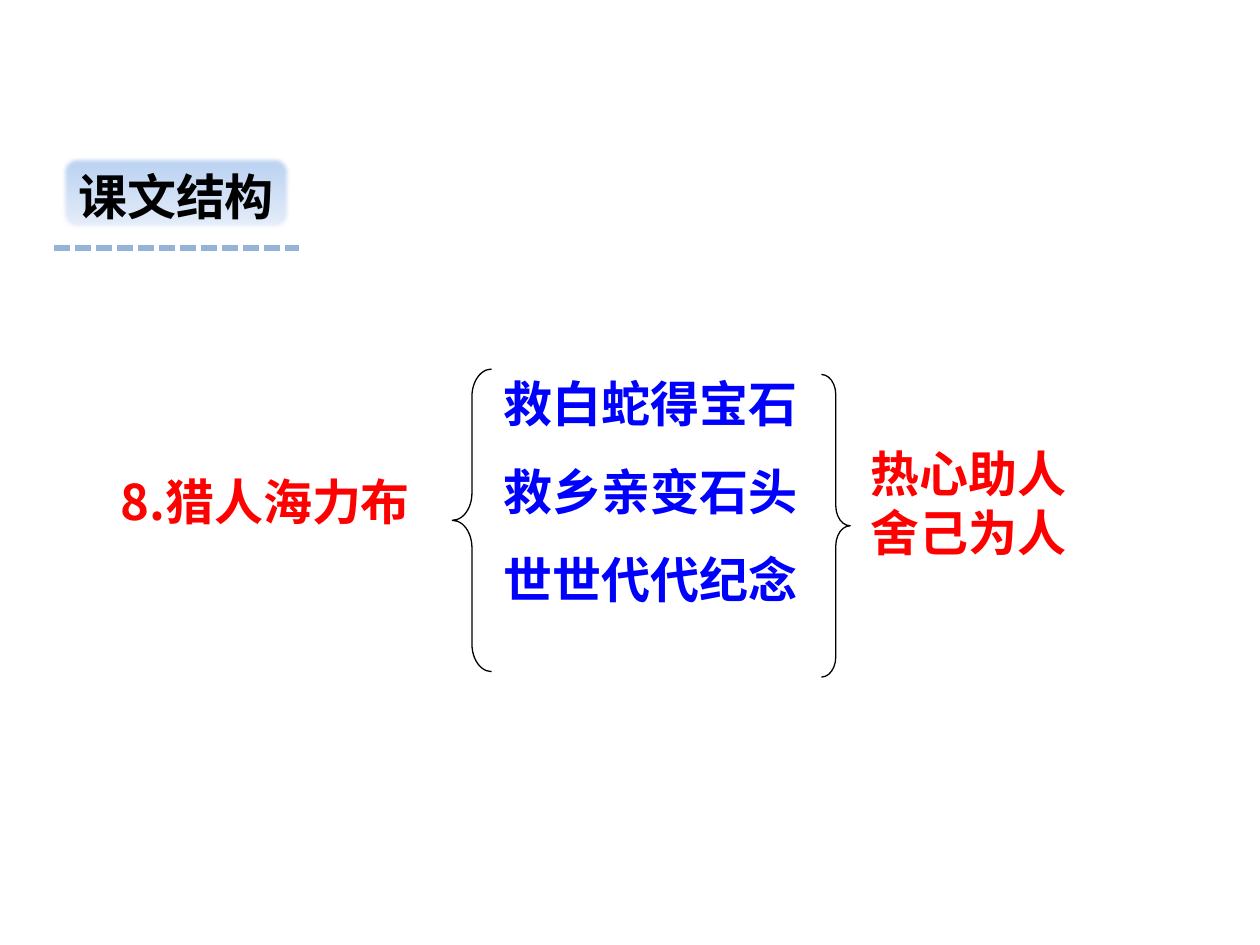
from lxml import etree
from pptx import Presentation
from pptx.dml.color import RGBColor
from pptx.enum.dml import MSO_LINE
from pptx.enum.shapes import MSO_CONNECTOR, MSO_SHAPE
from pptx.enum.text import MSO_ANCHOR, PP_ALIGN
from pptx.oxml.ns import qn
from pptx.util import Cm, Pt

ROUND_RECT, LEFT_BRACE = MSO_SHAPE.ROUNDED_RECTANGLE, MSO_SHAPE.LEFT_BRACE
STRAIGHT, DASH = MSO_CONNECTOR.STRAIGHT, MSO_LINE.SQUARE_DOT
TOP, LEFT, CENTER = MSO_ANCHOR.TOP, PP_ALIGN.LEFT, PP_ALIGN.CENTER

COLORS = {"title": "000000", "topic": "FF0000", "event": "0000FF",
          "brace": "000000", "rule": "95B3D7",
          "badge_top": "B7D0F1", "badge_bottom": "E8EFFA"}
CJK_FONT = "Noto Sans CJK SC"
SIZE = 28

TITLE = "课文结构"
BADGE = (1.24, 3.15, 4.62, 1.47)
RULE = (1.09, 6.02, 5.0)  # left, right, y

# lines, box (left, top, width, height), colour, latin font, line pitch in points
TEXTS = [
    (["8.猎人海力布"], (2.18, 9.38, 7.0, 2.64), "topic", CJK_FONT, 33.5),
    (["救白蛇得宝石", "救乡亲变石头", "世世代代纪念"],
     (9.91, 6.82, 7.29, 5.64), "event", CJK_FONT, 50.3),
    (["热心助人", "舍己为人"], (17.3, 8.82, 4.52, 2.64), "topic", "Arial", 33.5),
]
# box, mirrored
BRACES = [((9.12, 7.44, 0.79, 6.1), False),
          ((16.56, 7.55, 0.58, 6.1), True)]


def rgb(name):
    return RGBColor.from_string(COLORS[name])


def cm(values):
    return [Cm(v) for v in values]


def write(tf, lines, color, font, pitch, align=LEFT):
    tf.vertical_anchor = TOP
    for i, line in enumerate(lines):
        p = tf.paragraphs[0] if i == 0 else tf.add_paragraph()
        p.alignment = align
        p.line_spacing = Pt(pitch)
        r = p.add_run()
        r.text = line
        r.font.size, r.font.bold, r.font.name = Pt(SIZE), True, font
        r.font.color.rgb = rgb(color)
        ea = etree.SubElement(r.font._element, qn("a:ea"))
        ea.set("typeface", CJK_FONT)


def add_badge(slide):
    sp = slide.shapes.add_shape(ROUND_RECT, *cm(BADGE))
    sp.line.fill.background()
    sp.fill.gradient()
    sp.fill.gradient_angle = 270
    for stop, name in zip(sp.fill.gradient_stops, ("badge_top", "badge_bottom")):
        stop.color.rgb = rgb(name)
    sp.shadow.inherit = False
    effects = sp._element.spPr.find(qn("a:effectLst"))
    etree.SubElement(effects, qn("a:softEdge")).set("rad", str(Pt(2.5)))
    tf = sp.text_frame
    tf.word_wrap = False
    tf.margin_top = Cm(0.26)
    write(tf, [TITLE], "title", CJK_FONT, 30, CENTER)


def add_rule(slide):
    left, right, y = cm(RULE)
    line = slide.shapes.add_connector(STRAIGHT, left, y, right, y)
    line.line.color.rgb = rgb("rule")
    line.line.width = Pt(3)
    line.line.dash_style = DASH
    etree.SubElement(line._element.spPr, qn("a:effectLst"))


def add_brace(slide, box, mirrored):
    sp = slide.shapes.add_shape(LEFT_BRACE, *cm(box))
    sp.shadow.inherit = False
    sp.fill.background()
    sp.line.color.rgb = rgb("brace")
    sp.line.width = Pt(0.75)
    sp.adjustments[0] = 0.7
    if mirrored:
        sp._element.spPr.xfrm.set("flipH", "1")


def main():
    prs = Presentation()
    prs.slide_width, prs.slide_height = Cm(25.4), Cm(19.05)
    s = prs.slides.add_slide(prs.slide_layouts[6])
    add_badge(s)
    add_rule(s)
    for lines, box, color, font, pitch in TEXTS:
        tf = s.shapes.add_textbox(*cm(box)).text_frame
        tf.word_wrap = True
        write(tf, lines, color, font, pitch)
    for box, mirrored in BRACES:
        add_brace(s, box, mirrored)
    prs.save("out.pptx")


if __name__ == "__main__":
    main()
